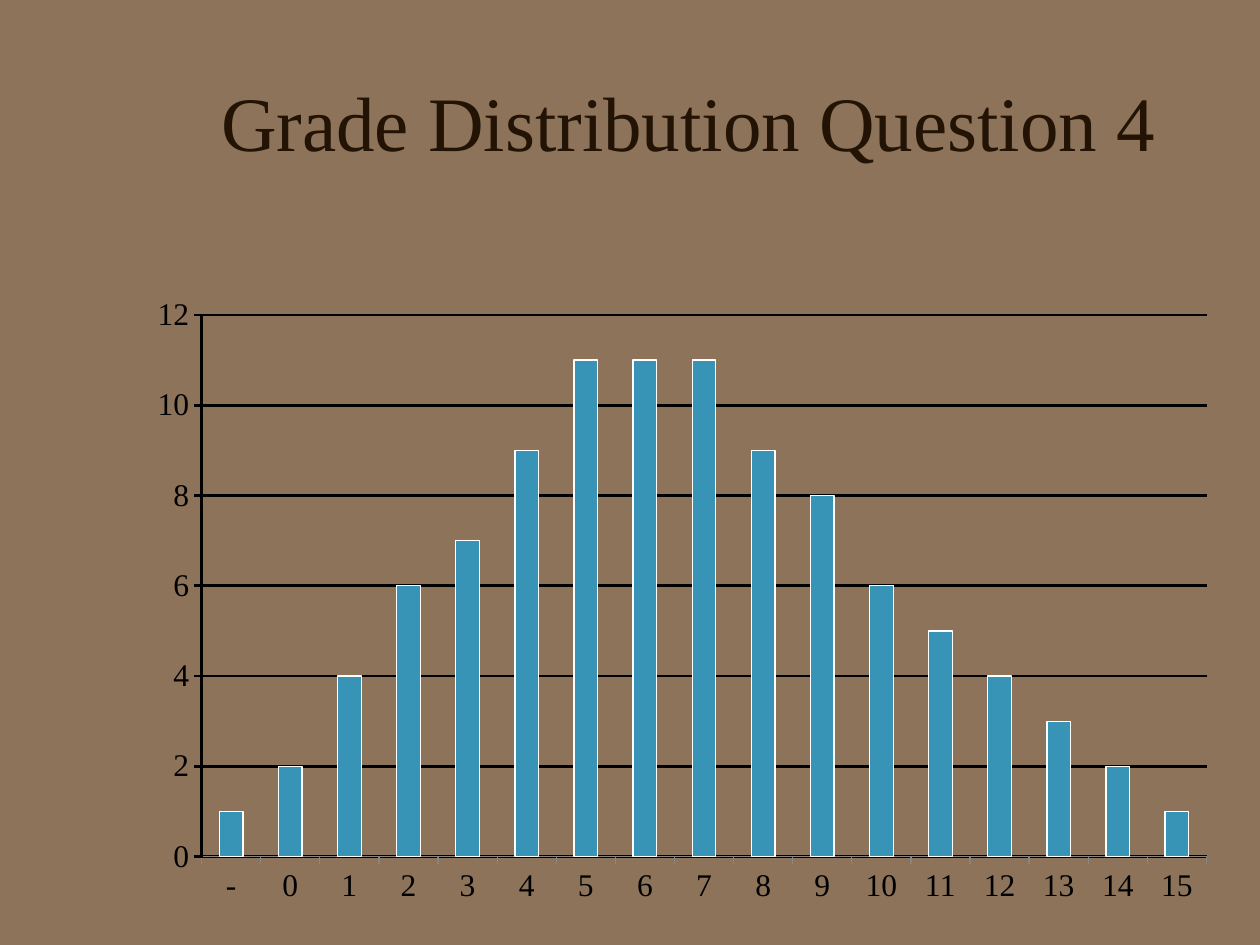
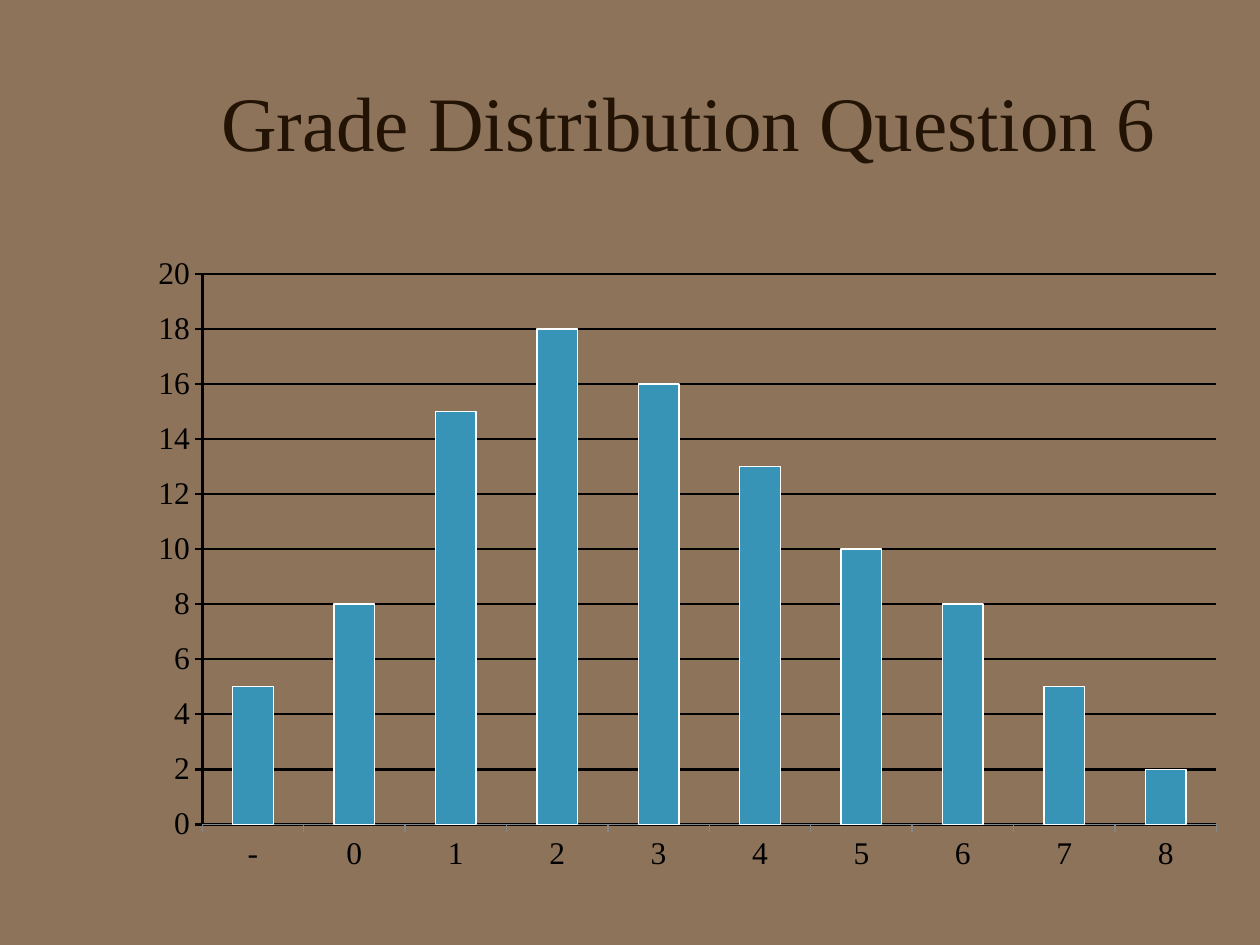
"""Build two grade distribution slides, each with a column chart."""
from lxml import etree
from pptx import Presentation
from pptx import util as u
from pptx.chart.data import CategoryChartData
from pptx.dml.color import RGBColor
from pptx.enum import chart as charts, text
from pptx.oxml.ns import qn

QUESTIONS = [
    {"title": " Grade Distribution Question 4", "area": (1.08, 2.25, 8.67, 5),
     "top_count": 12,
     "counts": [1, 2, 4, 6, 7, 9, 11, 11, 11, 9, 8, 6, 5, 4, 3, 2, 1]},
    {"title": " Grade Distribution Question 6", "area": (1.08, 1.92, 8.75, 5.08),
     "top_count": 20,
     "counts": [5, 8, 15, 18, 16, 13, 10, 8, 5, 2]},
]

BROWN = RGBColor(0x8C, 0x73, 0x5A)
DARK_BROWN = RGBColor(0x22, 0x13, 0x04)
BLUE = RGBColor(0x37, 0x94, 0xB6)
GREY = RGBColor(0x86, 0x86, 0x86)
BLACK = RGBColor(0, 0, 0)
WHITE = RGBColor(255, 255, 255)
FONT = "Times New Roman"
TITLE_AREA = (1.17, 0.33, 8.44, 1.25)
PLOT_LAYOUT = {"layoutTarget": "inner", "xMode": "edge", "yMode": "edge",
               "x": 0.06, "y": 0.05, "w": 0.92, "h": 0.86}


def apply(target, **values):
    for name, value in values.items():
        setattr(target, name, value)


def style_font(font, size, color):
    apply(font, name=FONT, size=u.Pt(size), bold=False)
    font.color.rgb = color


def style_line(line, color, width):
    line.color.rgb = color
    line.width = u.Pt(width)


def place_plot(chart):
    plot_area = chart.element.find(".//" + qn("c:plotArea"))
    for old in plot_area.findall(qn("c:layout")):
        plot_area.remove(old)
    layout = etree.Element(qn("c:layout"))
    manual = etree.SubElement(layout, qn("c:manualLayout"))
    for name, value in PLOT_LAYOUT.items():
        etree.SubElement(manual, qn("c:" + name)).set("val", str(value))
    plot_area.insert(0, layout)


def add_title(slide, wording):
    title = slide.shapes.title
    left, top, width, height = map(u.Inches, TITLE_AREA)
    apply(title, left=left, top=top, width=width, height=height)
    title.text_frame.text = wording
    apply(title.text_frame, vertical_anchor=text.MSO_ANCHOR.MIDDLE, word_wrap=True)
    heading = title.text_frame.paragraphs[0]
    heading.alignment = text.PP_ALIGN.CENTER
    style_font(heading.runs[0].font, 44, DARK_BROWN)


def add_distribution(slide, question):
    counts = question["counts"]
    grades = CategoryChartData()
    grades.categories = ["-"] + [str(grade) for grade in range(len(counts) - 1)]
    grades.add_series("Series 1", counts)
    chart = slide.shapes.add_chart(charts.XL_CHART_TYPE.COLUMN_CLUSTERED,
                                   *map(u.Inches, question["area"]), grades).chart
    apply(chart, has_legend=False, has_title=False)
    style_font(chart.font, 18, BLACK)
    place_plot(chart)

    columns = chart.plots[0]
    apply(columns, gap_width=150, vary_by_categories=False)
    bars = columns.series[0].format
    bars.fill.solid()
    bars.fill.fore_color.rgb = BLUE
    style_line(bars.line, WHITE, 0.75)

    tick = charts.XL_TICK_MARK
    for axis in (chart.category_axis, chart.value_axis):
        apply(axis, major_tick_mark=tick.OUTSIDE, minor_tick_mark=tick.NONE)
    style_line(chart.category_axis.format.line, GREY, 0.75)
    count_axis = chart.value_axis
    apply(count_axis, minimum_scale=0, maximum_scale=question["top_count"],
          major_unit=2, has_major_gridlines=True)
    for line in (count_axis.format.line, count_axis.major_gridlines.format.line):
        style_line(line, BLACK, 1.5)


def main():
    deck = Presentation()
    apply(deck, slide_width=u.Inches(10), slide_height=u.Inches(7.5))
    backdrop = deck.slide_master.background.fill
    backdrop.solid()
    backdrop.fore_color.rgb = BROWN
    for question in QUESTIONS:
        slide = deck.slides.add_slide(deck.slide_layouts[5])
        add_title(slide, question["title"])
        add_distribution(slide, question)
    deck.save("out.pptx")


if __name__ == "__main__":
    main()
